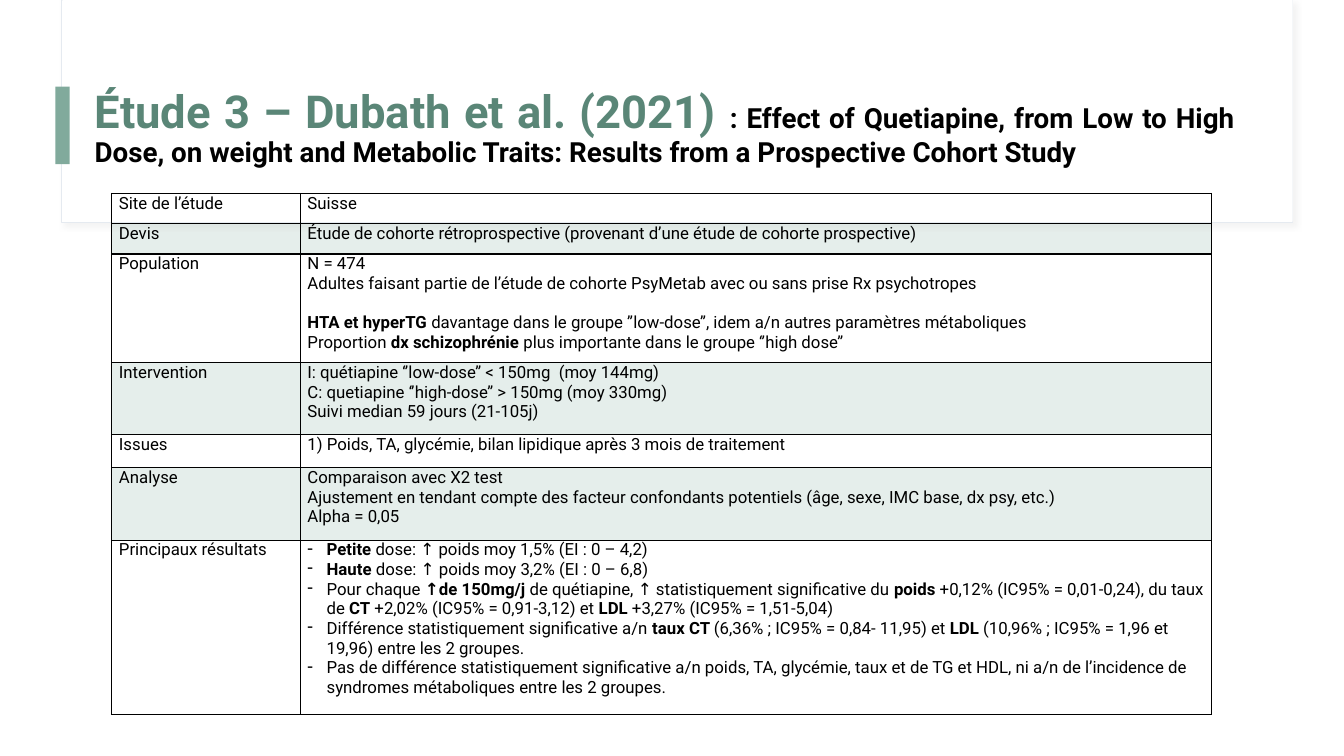
"""Build the summary slide for the third study: title and characteristics table."""
from dataclasses import dataclass

import pptx
import pptx.dml.color
import pptx.enum.shapes
import pptx.enum.text
import pptx.oxml
import pptx.oxml.ns
import pptx.util
from pptx.util import Inches


@dataclass(frozen=True)
class Theme:
    """Colours, font and type sizes of the slide."""
    font: str = "Roboto"
    white: str = "FFFFFF"
    black: str = "000000"
    frame: str = "E5EAF0"
    shadow: str = "D9D9D9"
    accent: str = "81AA9C"
    heading: str = "5A8677"
    heading_size: float = 32.4
    subtitle_size: float = 19.8
    body_size: float = 12
    blank_line: float = 14


THEME = Theme()
NAMESPACE = pptx.oxml.ns.nsdecls("a")

STUDY_ROWS = [
    (0.3, "Site de l’étude", ["Suisse"]),
    (0.3, "Devis", ["Étude de cohorte rétroprospective (provenant d’une étude de cohorte prospective)"]),
    (1.08, "Population", [
        "N = 474",
        "Adultes faisant partie de l’étude de cohorte PsyMetab avec ou sans prise Rx psychotropes",
        "^**HTA et hyperTG **davantage dans le groupe ’’low-dose’’, idem a/n autres paramètres métaboliques",
        "Proportion **dx schizophrénie **plus importante dans le groupe ‘’high dose’’",
    ]),
    (0.71, "Intervention", [
        "I: quétiapine ‘’low-dose’’ < 150mg  (moy 144mg)",
        "C: quetiapine ‘’high-dose’’ > 150mg (moy 330mg)",
        "Suivi median 59 jours (21-105j)",
    ]),
    (0.33, "Issues", ["1) Poids, TA, glycémie, bilan lipidique après 3 mois de traitement"]),
    (0.72, "Analyse", [
        "Comparaison avec X2 test",
        "Ajustement en tendant compte des facteur confondants potentiels (âge, sexe, IMC base, dx psy, etc.)",
        "Alpha = 0,05",
    ]),
    (1.73, "Principaux résultats", [
        "-**Petite** dose: ↑ poids moy 1,5% (EI : 0 – 4,2)",
        "-**Haute** dose: ↑ poids moy 3,2% (EI : 0 – 6,8)",
        "-Pour chaque **↑de 150mg/j **de quétiapine, ↑ statistiquement significative du **poids** +0,12% "
        "(IC95% = 0,01-0,24), du taux de **CT** +2,02% (IC95% = 0,91-3,12) et **LDL** +3,27% "
        "(IC95% = 1,51-5,04)",
        "-Différence statistiquement significative a/n **taux CT **(6,36% ; IC95% = 0,84- 11,95) et "
        "**LDL** (10,96% ; IC95% = 1,96 et 19,96) entre les 2 groupes.",
        "-Pas de différence statistiquement significative a/n poids, TA, glycémie, taux et de TG et HDL, "
        "ni a/n de l’incidence de syndromes métaboliques entre les 2 groupes.",
    ]),
]


def rgb(value):
    """Turn a hexadecimal string into a colour."""
    return pptx.dml.color.RGBColor.from_string(value)


def set_font(font, size, colour, bold=None):
    """Apply the theme font with a size, colour and weight."""
    font.name = THEME.font
    font.size = pptx.util.Pt(size)
    font.color.rgb = rgb(colour)
    font.bold = bold


def add_panel(page, left, top, width, height, fill, line=None):
    """Draw a filled rectangle, with a thin outline if a line colour is given."""
    panel = page.shapes.add_shape(
        pptx.enum.shapes.MSO_SHAPE.RECTANGLE,
        Inches(left), Inches(top), Inches(width), Inches(height))
    panel.shadow.inherit = False
    panel.fill.solid()
    panel.fill.fore_color.rgb = rgb(fill)
    if line:
        panel.line.color.rgb = rgb(line)
        panel.line.width = pptx.util.Pt(0.75)
    else:
        panel.line.fill.background()
    return panel


def add_soft_shadow(panel):
    """Give a panel a faint shadow to the lower right."""
    effects = panel._element.spPr.find(pptx.oxml.ns.qn("a:effectLst"))
    effects.append(pptx.oxml.parse_xml(
        f'<a:outerShdw {NAMESPACE} blurRad="{pptx.util.Pt(4)}" dist="{pptx.util.Pt(3)}" '
        f'dir="2700000" algn="tl" rotWithShape="0"><a:srgbClr val="{THEME.shadow}">'
        '<a:alpha val="30000"/></a:srgbClr></a:outerShdw>'))


def add_title(page, heading, subtitle):
    """Write the heading and the article title in one justified paragraph."""
    box = page.shapes.add_textbox(Inches(0.84), Inches(0.63), Inches(11.5), Inches(1.29))
    frame = box.text_frame
    frame.word_wrap = True
    frame.vertical_anchor = pptx.enum.text.MSO_ANCHOR.MIDDLE
    para = frame.paragraphs[0]
    para.alignment = pptx.enum.text.PP_ALIGN.JUSTIFY
    para.line_spacing = 0.9
    for text, size, colour in (
            (heading, THEME.heading_size, THEME.heading),
            (subtitle, THEME.subtitle_size, THEME.black)):
        span = para.add_run()
        span.text = text
        set_font(span.font, size, colour, True)


def add_dash(para):
    """Turn a paragraph into a dashed list item with a hanging indent."""
    properties = para._p.get_or_add_pPr()
    indent = Inches(0.19)
    properties.set("marL", str(indent))
    properties.set("indent", str(-indent))
    properties.insert_element_before(
        pptx.oxml.parse_xml(f'<a:buChar {NAMESPACE} char="-"/>'),
        "a:tabLst", "a:defRPr", "a:extLst")


def write_paragraph(para, text):
    """Write marked text: ** toggles bold, a leading - lists, a leading ^ spaces."""
    set_font(para.font, THEME.body_size, THEME.black)
    if text.startswith("-"):
        add_dash(para)
    elif text.startswith("^"):
        para.space_before = pptx.util.Pt(THEME.blank_line)
    for index, part in enumerate(text.lstrip("-^").split("**")):
        if part:
            span = para.add_run()
            span.text = part
            if index % 2:
                span.font.bold = True


def style_cell(cell, shaded):
    """Set the margins, fill and black borders of a cell."""
    cell.margin_left = cell.margin_right = Inches(0.07)
    cell.margin_top = cell.margin_bottom = 0
    properties = cell._tc.get_or_add_tcPr()
    if shaded:
        cell.fill.solid()
        cell.fill.fore_color.rgb = rgb(THEME.accent)
        colour = properties.find(".//" + pptx.oxml.ns.qn("a:srgbClr"))
        colour.append(pptx.oxml.parse_xml(f'<a:alpha {NAMESPACE} val="20000"/>'))
    else:
        cell.fill.background()
    for index, side in enumerate("LRTB"):
        properties.insert(index, pptx.oxml.parse_xml(
            f'<a:ln{side} {NAMESPACE} w="{pptx.util.Pt(1)}"><a:solidFill>'
            f'<a:srgbClr val="{THEME.black}"/></a:solidFill></a:ln{side}>'))


def add_study_table(page, rows):
    """Lay out the study characteristics, shading every second row."""
    widths = (1.87, 9.04)
    height = sum(row[0] for row in rows)
    table = page.shapes.add_table(
        len(rows), len(widths), Inches(1.11), Inches(1.92),
        Inches(sum(widths)), Inches(height)).table
    table.first_row = table.horz_banding = False
    for column, width in zip(table.columns, widths):
        column.width = Inches(width)
    for index, (row_height, label, details) in enumerate(rows):
        table.rows[index].height = Inches(row_height)
        for cell, texts in zip(table.rows[index].cells, ([label], details)):
            style_cell(cell, shaded=index % 2 == 1)
            frame = cell.text_frame
            for position, text in enumerate(texts):
                para = frame.add_paragraph() if position else frame.paragraphs[0]
                write_paragraph(para, text)


def main():
    """Build the deck and save it."""
    deck = pptx.Presentation()
    deck.slide_width, deck.slide_height = Inches(13.33), Inches(7.5)
    page = deck.slides.add_slide(deck.slide_layouts[6])
    add_soft_shadow(add_panel(page, 0.61, 0, 12.21, 2.21, THEME.white, THEME.frame))
    add_panel(page, 0.62, 0, 12.2, 2.2, THEME.white)
    add_panel(page, 0.55, 0.86, 0.14, 0.77, THEME.accent)
    add_title(
        page, "Étude 3 – Dubath et al. (2021) ",
        ": Effect of Quetiapine, from Low to High Dose, on weight and Metabolic Traits: "
        "Results from a Prospective Cohort Study")
    add_study_table(page, STUDY_ROWS)
    deck.save("out.pptx")


if __name__ == "__main__":
    main()
